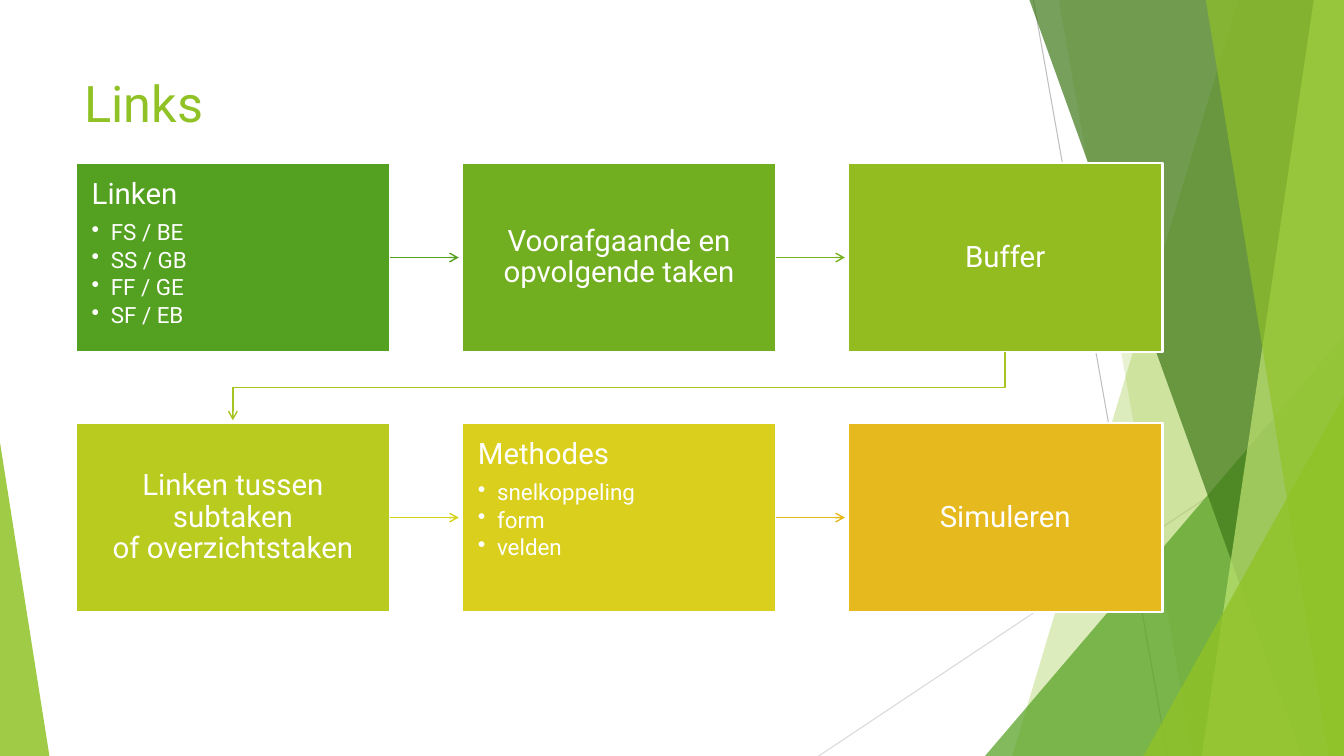
from lxml.etree import SubElement
from pptx import Presentation
from pptx.dml.color import RGBColor
from pptx.enum.shapes import MSO_CONNECTOR, MSO_SHAPE
from pptx.enum.text import MSO_ANCHOR, PP_ALIGN
from pptx.oxml.ns import qn
from pptx.util import Inches, Pt

FONT = "Roboto"
WHITE, LIME = "FFFFFF", "90C226"

# Step grid
LEFT, TOP = 0.75, 1.62
STEP_W, STEP_H = 3.12, 1.87
PITCH_X, PITCH_Y = 3.83, 2.58
COLUMNS = 3
ARROW_GAP = 0.03

# Heading, bullets, box colour, colour of the arrow to the next step
STEPS = [
    ("Linken", ["FS / BE", "SS / GB", "FF / GE", "SF / EB"], "54A021", "54A021"),
    ("Voorafgaande en opvolgende taken", [], "71AE20", "79B220"),
    ("Buffer", [], "92BC1F", "A5C41F"),
    ("Linken tussen subtaken\nof overzichtstaken", [], "B9CB1E", "D7D31D"),
    ("Methodes", ["snelkoppeling", "form", "velden"], "DACF1C", "E6B91E"),
    ("Simuleren", [], "E6B91E", None),
]

# Decoration: outline points, colour, opacity in percent
BANDS_BACK = [
    ([(12.28, 0), (13.33, 0), (13.33, 7.5), (10.04, 7.5)], LIME, 30),
    ([(10.5, 0), (13.33, 0), (13.33, 7.5), (11.83, 7.5)], LIME, 20),
]
BANDS_FRONT = [
    ([(10.21, 0), (13.33, 0), (13.33, 7.5), (12.91, 7.5)], "3F7819", 70),
    ([(13.03, 0), (13.33, 0), (13.33, 7.5), (11.92, 7.5)], "C0E474", 70),
    ([(11.96, 0), (13.33, 0), (13.33, 7.5), (13.18, 7.5)], LIME, 65),
]


def rgb(value):
    return RGBColor.from_string(value)


def paint(shape, color, opacity=100):
    shape.shadow.inherit = False
    shape.fill.solid()
    shape.fill.fore_color.rgb = rgb(color)
    shape.line.fill.background()
    if opacity < 100:
        tint = shape.fill._xPr.find(qn("a:solidFill"))[0]
        SubElement(tint, qn("a:alpha"), val=str(opacity * 1000))


def outline(slide, points, close):
    corners = [(Inches(x), Inches(y)) for x, y in points]
    builder = slide.shapes.build_freeform(*corners[0], scale=1.0)
    builder.add_line_segments(corners[1:], close=close)
    return builder.convert_to_shape()


def add_band(slide, points, color, opacity):
    paint(outline(slide, points, True), color, opacity)


def add_triangle(slide, left, top, width, apex, color, opacity):
    triangle = slide.shapes.add_shape(
        MSO_SHAPE.ISOSCELES_TRIANGLE,
        Inches(left), Inches(top), Inches(width), Inches(7.5 - top))
    triangle.adjustments[0] = apex
    paint(triangle, color, opacity)


def add_line(slide, x1, y1, x2, y2, color, width):
    line = slide.shapes.add_connector(
        MSO_CONNECTOR.STRAIGHT, Inches(x1), Inches(y1), Inches(x2), Inches(y2))
    line.line.color.rgb = rgb(color)
    line.line.width = Pt(width)
    SubElement(line._element.spPr, qn("a:effectLst"))
    return line


def add_arrowhead(line):
    SubElement(line.line._get_or_add_ln(), qn("a:tailEnd"), type="arrow")


def write(paragraph, text, size, color):
    for i, part in enumerate(text.split("\n")):
        if i:
            paragraph.add_line_break()
        run = paragraph.add_run()
        run.text = part
        run.font.name = FONT
        run.font.size = Pt(size)
        run.font.color.rgb = rgb(color)


def add_bullet(paragraph):
    props = paragraph._p.get_or_add_pPr()
    props.set("marL", str(Inches(0.19)))
    props.set("indent", str(-Inches(0.19)))
    SubElement(props, qn("a:buChar"), char="•")


def add_title(slide, text):
    box = slide.shapes.add_textbox(
        Inches(0.74), Inches(0.67), Inches(9.4), Inches(0.8))
    box.text_frame.word_wrap = True
    write(box.text_frame.paragraphs[0], text, 36, LIME)


def add_step(slide, left, top, heading, bullets, color):
    step = slide.shapes.add_shape(
        MSO_SHAPE.RECTANGLE,
        Inches(left), Inches(top), Inches(STEP_W), Inches(STEP_H))
    paint(step, color)
    step.line.color.rgb = rgb(WHITE)
    step.line.width = Pt(1.5)

    frame = step.text_frame
    frame.word_wrap = True
    frame.margin_left = frame.margin_right = Inches(0.16)
    frame.margin_top = frame.margin_bottom = Inches(0.16)
    frame.vertical_anchor = MSO_ANCHOR.TOP if bullets else MSO_ANCHOR.MIDDLE
    for i, text in enumerate([heading] + bullets):
        paragraph = frame.add_paragraph() if i else frame.paragraphs[0]
        paragraph.alignment = PP_ALIGN.LEFT if bullets else PP_ALIGN.CENTER
        paragraph.line_spacing = 0.9
        paragraph.space_after = Pt(2.4 if i else 7.35)
        if i:
            paragraph.level = 1
            add_bullet(paragraph)
        write(paragraph, text, 16 if i else 21, WHITE)
    return step


def add_step_arrow(slide, step, left, top, color):
    middle = top + STEP_H / 2
    arrow = add_line(slide, left + STEP_W, middle,
                     left + PITCH_X - ARROW_GAP, middle, color, 1)
    arrow.begin_connect(step, 3)
    add_arrowhead(arrow)


def add_row_arrow(slide, left, top, color):
    start_x, end_x = left + STEP_W / 2, LEFT + STEP_W / 2
    start_y, end_y = top + STEP_H, top + PITCH_Y - ARROW_GAP
    bend_y = (top + STEP_H + top + PITCH_Y) / 2
    arrow = outline(slide, [(start_x, start_y), (start_x, bend_y),
                            (end_x, bend_y), (end_x, end_y)], False)
    arrow.shadow.inherit = False
    arrow.fill.background()
    arrow.line.color.rgb = rgb(color)
    arrow.line.width = Pt(1)
    add_arrowhead(arrow)


def add_decoration(slide):
    add_line(slide, 10.25, 0, 11.58, 7.5, "BFBFBF", 0.75)
    add_line(slide, 13.33, 4.03, 8.12, 7.5, "D9D9D9", 0.75)
    for band in BANDS_BACK:
        add_band(slide, *band)
    add_triangle(slide, 9.77, 3.33, 3.56, 1, "54A021", 72)
    for band in BANDS_FRONT:
        add_band(slide, *band)
    add_triangle(slide, 11.34, 3.93, 1.99, 1, LIME, 80)
    add_triangle(slide, 0, 4.39, 0.49, 0, LIME, 85)


def main():
    deck = Presentation()
    deck.slide_width, deck.slide_height = Inches(13.33), Inches(7.5)
    slide = deck.slides.add_slide(deck.slide_layouts[6])

    add_decoration(slide)
    add_title(slide, "Links")

    # Steps run left to right, then continue on the next row
    for i, (heading, bullets, color, arrow_color) in enumerate(STEPS):
        row, column = divmod(i, COLUMNS)
        left, top = LEFT + column * PITCH_X, TOP + row * PITCH_Y
        step = add_step(slide, left, top, heading, bullets, color)
        if arrow_color and column < COLUMNS - 1:
            add_step_arrow(slide, step, left, top, arrow_color)
        elif arrow_color:
            add_row_arrow(slide, left, top, arrow_color)

    deck.save("out.pptx")


if __name__ == "__main__":
    main()
